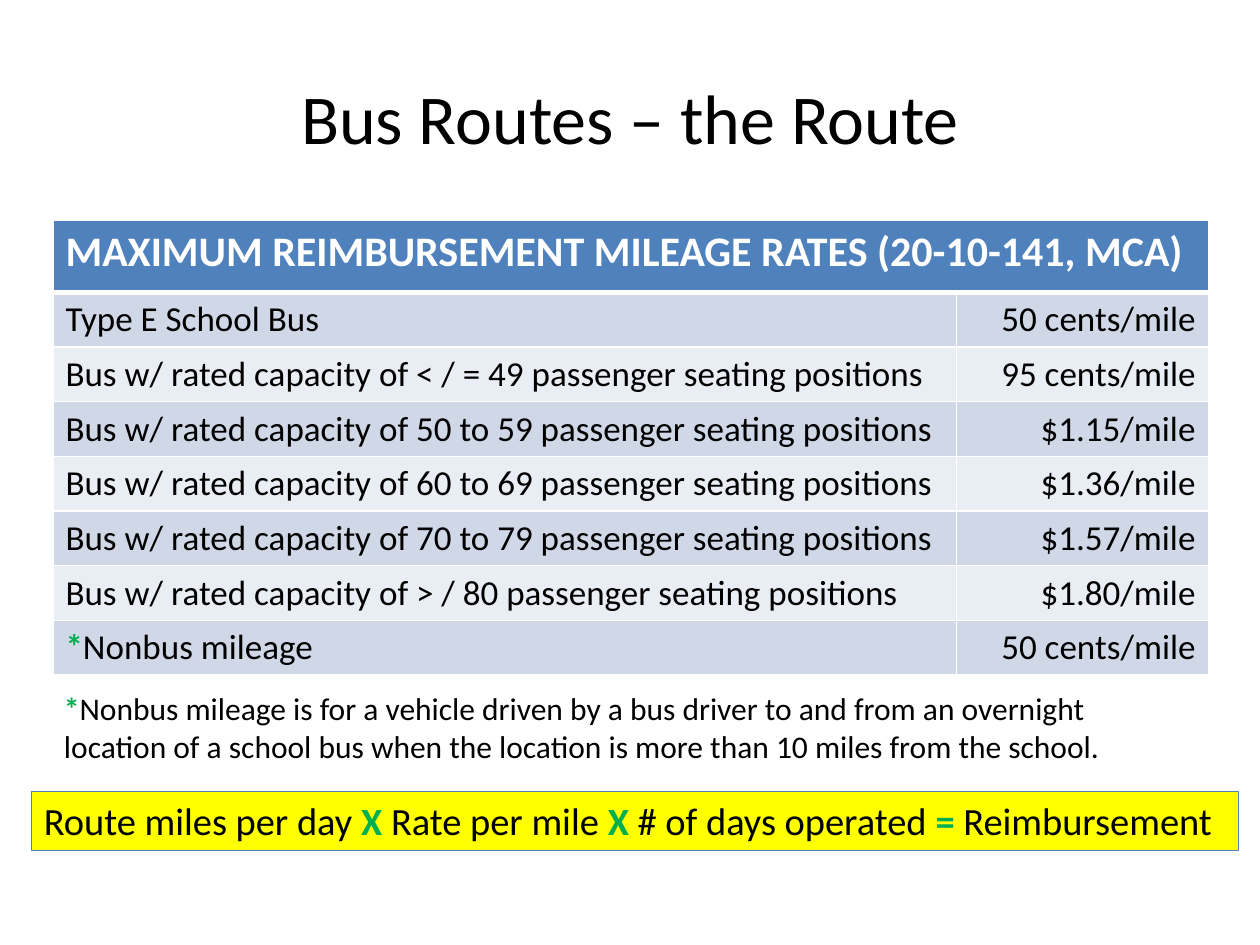
from dataclasses import dataclass

from lxml.etree import SubElement
from pptx import Presentation
from pptx.dml.color import RGBColor
from pptx.enum.shapes import MSO_SHAPE
from pptx.enum.text import MSO_ANCHOR, PP_ALIGN
from pptx.oxml import parse_xml
from pptx.oxml.ns import nsdecls, qn
from pptx.util import Inches, Pt


@dataclass(frozen=True)
class Theme:
    font: str = "Calibri"
    text: str = "000000"
    white: str = "FFFFFF"
    blue: str = "4F81BD"
    green: str = "00B050"
    yellow: str = "FFFF00"
    bands: tuple = ("D0D8E8", "E9EDF4")
    title: int = 40
    header: int = 24
    formula: int = 22
    body: int = 20
    note: int = 18


ACCENTS = {"*", "X", "="}
RATES = [
    (["Type E School Bus"], "50 cents/mile"),
    (["Bus w/ rated capacity of < / = 49 passenger seating positions"], "95 cents/mile"),
    (["Bus w/ rated capacity of 50 to 59 passenger seating positions"], "$1.15/mile"),
    (["Bus w/ rated capacity of 60 to 69 passenger seating positions"], "$1.36/mile"),
    (["Bus w/ rated capacity of 70 to 79 passenger seating positions"], "$1.57/mile"),
    (["Bus w/ rated capacity of > / 80 passenger seating positions"], "$1.80/mile"),
    (["*", "Nonbus mileage"], "50 cents/mile"),
]


class SlideBuilder:
    def __init__(self, slide, theme):
        self.s = slide
        self.theme = theme

    def add_runs(self, tf, parts, size, color=None, bold=False, align=PP_ALIGN.LEFT):
        p = tf.paragraphs[0]
        p.alignment = align
        for part in parts:
            accent = part.strip() in ACCENTS
            r = p.add_run()
            r.text = part
            fmt = {"name": self.theme.font, "size": Pt(size), "bold": bold or accent}
            for key, value in fmt.items():
                setattr(r.font, key, value)
            shade = self.theme.green if accent else color or self.theme.text
            r.font.color.rgb = RGBColor.from_string(shade)

    def text(self, box, parts, size, anchor=MSO_ANCHOR.TOP, align=PP_ALIGN.LEFT):
        tf = self.s.shapes.add_textbox(*map(Inches, box)).text_frame
        for key, value in {"word_wrap": True, "vertical_anchor": anchor}.items():
            setattr(tf, key, value)
        self.add_runs(tf, parts, size, align=align)

    def banner(self, box, parts, size):
        sp = self.s.shapes.add_shape(MSO_SHAPE.RECTANGLE, *map(Inches, box))
        sp.shadow.inherit = False
        sp.fill.solid()
        sp.fill.fore_color.rgb = RGBColor.from_string(self.theme.yellow)
        sp.line.color.rgb = RGBColor.from_string(self.theme.blue)
        sp.line.width = Pt(0.75)
        tf = sp.text_frame
        for key, value in {"word_wrap": True, "vertical_anchor": MSO_ANCHOR.TOP}.items():
            setattr(tf, key, value)
        self.add_runs(tf, parts, size)

    def style_cell(self, cell, fill, top=1, bottom=1):
        cell.fill.solid()
        cell.fill.fore_color.rgb = RGBColor.from_string(fill)
        tc_pr = cell._tc.get_or_add_tcPr()
        widths = {"lnL": 1, "lnR": 1, "lnT": top, "lnB": bottom}
        for i, (side, width) in enumerate(widths.items()):
            ln = parse_xml(f'<a:{side} {nsdecls("a")} w="{Pt(width)}"/>')
            line_fill = SubElement(ln, qn("a:solidFill"))
            SubElement(line_fill, qn("a:srgbClr"), val=self.theme.white)
            tc_pr.insert(i, ln)

    def rate_table(self, box, heading, rates, col_widths, header_height, row_height):
        t = self.theme
        table = self.s.shapes.add_table(len(rates) + 1, 2, *map(Inches, box)).table
        for col, width in zip(table.columns, col_widths):
            col.width = Inches(width)
        for i, row in enumerate(table.rows):
            row.height = Inches(row_height if i else header_height)
        table.cell(0, 0).merge(table.cell(0, 1))
        for cell in table.rows[0].cells:
            self.style_cell(cell, t.blue, bottom=3)
        self.add_runs(table.cell(0, 0).text_frame, [heading], t.header, t.white, True)
        for i, (label, rate) in enumerate(rates, start=1):
            columns = ((label, PP_ALIGN.LEFT), ([rate], PP_ALIGN.RIGHT))
            for j, (parts, align) in enumerate(columns):
                cell = table.cell(i, j)
                self.style_cell(cell, t.bands[(i - 1) % 2], top=3 if i == 1 else 1)
                self.add_runs(cell.text_frame, parts, t.body, align=align)


def main():
    prs = Presentation()
    prs.slide_width, prs.slide_height = Inches(10), Inches(7.5)
    theme = Theme()
    b = SlideBuilder(prs.slides.add_slide(prs.slide_layouts[6]), theme)
    b.text((0.5, 0.3, 9, 1.25), ["Bus Routes – the Route"], theme.title,
           MSO_ANCHOR.MIDDLE, PP_ALIGN.CENTER)
    b.rate_table((0.42, 1.75, 9.17, 3.61),
                 "MAXIMUM REIMBURSEMENT MILEAGE RATES (20-10-141, MCA)",
                 RATES, (7.17, 2), 0.57, 0.42)
    b.text((0.41, 5.42, 9.17, 0.71),
           ["*", "Nonbus mileage is for a vehicle driven by a bus driver to and from an "
            "overnight location of a school bus when the location is more than 10 miles "
            "from the school."], theme.note)
    b.banner((0.25, 6.28, 9.58, 0.47),
             ["Route miles per day ", "X ", "Rate per mile ", "X",
              " # of days operated ", "=", " Reimbursement"], theme.formula)
    prs.save("out.pptx")


if __name__ == "__main__":
    main()
